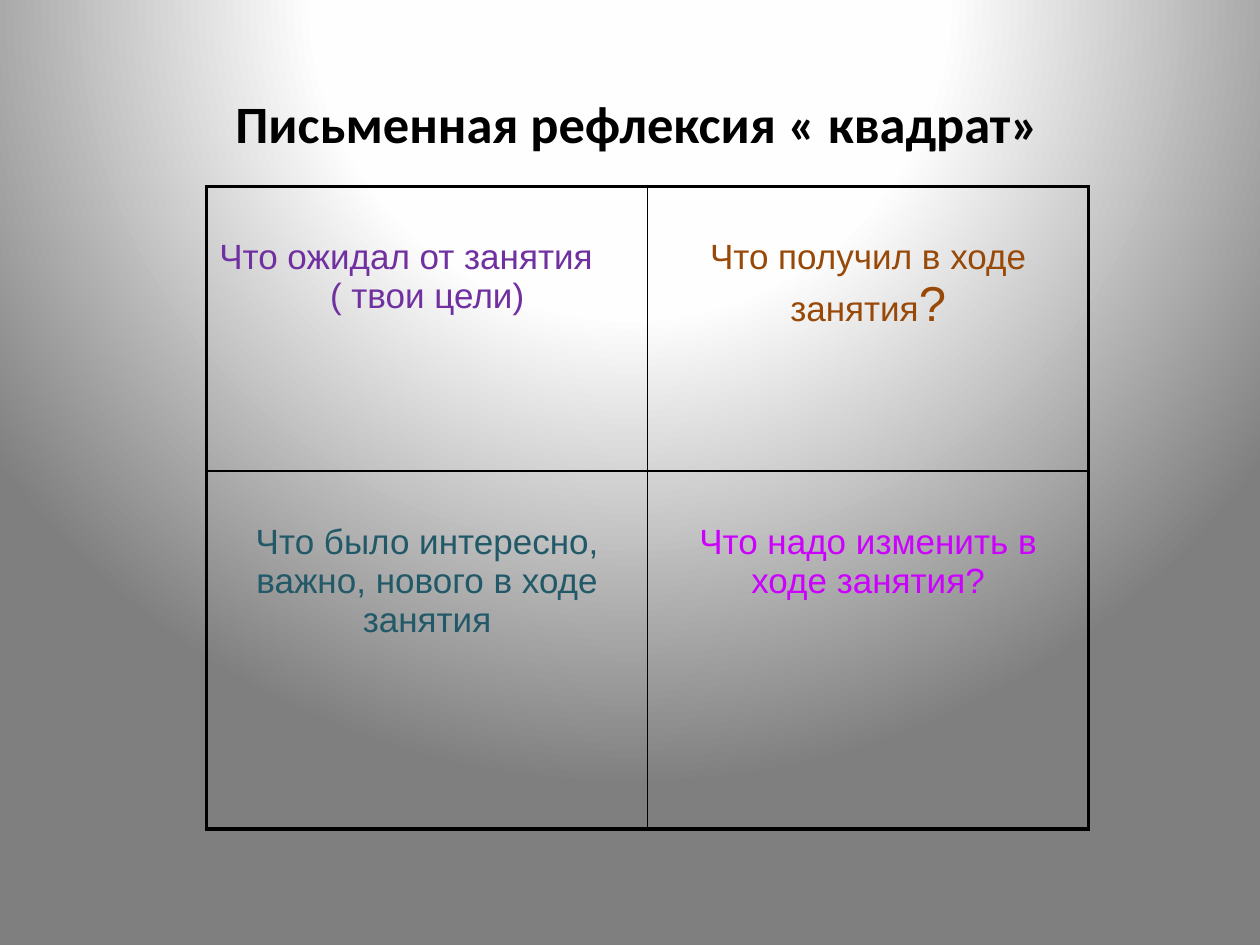
from pptx import Presentation
from pptx import util as u
from pptx.dml.color import RGBColor
from pptx.enum import text
from pptx.oxml import parse_xml
from pptx.oxml.ns import nsdecls

BLACK = RGBColor(0x00, 0x00, 0x00)
PURPLE = RGBColor(0x70, 0x30, 0xA0)
BROWN = RGBColor(0x98, 0x48, 0x07)
TEAL = RGBColor(0x21, 0x59, 0x68)
MAGENTA = RGBColor(0xCC, 0x00, 0xFF)
GLOW = [(0, RGBColor(0xFF, 0xFF, 0xFF)),
        (40, RGBColor(0xFE, 0xFE, 0xFE)),
        (100, RGBColor(0x7F, 0x7F, 0x7F))]

CENTER, LEFT = text.PP_ALIGN.CENTER, text.PP_ALIGN.LEFT
OUTER, INNER = 2.25, 1

# Each cell: colour, then paragraphs as (alignment, [(text, size)])
QUESTIONS = [
    [(PURPLE, [(LEFT, [("Что ожидал от занятия", 20)]),
               (CENTER, [("( твои цели)", 20)])]),
     (BROWN, [(CENTER, [("Что получил в ходе занятия", 20), ("?", 28)])])],
    [(TEAL, [(CENTER, [("Что было интересно, важно, нового в ходе занятия", 20)])]),
     (MAGENTA, [(CENTER, [("Что надо изменить в ходе занятия?", 20)])])],
]


def set_background(s):
    """Circular glow centred above the slide."""
    stops = "".join(f'<a:gs pos="{pos * 1000}"><a:srgbClr val="{color}"/></a:gs>'
                    for pos, color in GLOW)
    s.background.fill.gradient()
    grad = s.element.find(".//{*}gradFill")
    grad.getparent().replace(grad, parse_xml(
        f'<a:gradFill {nsdecls("a")} rotWithShape="1"><a:gsLst>{stops}</a:gsLst>'
        '<a:path path="circle"><a:fillToRect l="50000" t="-80000" r="50000" b="180000"/>'
        '</a:path></a:gradFill>'))


def add_title(s, box):
    tf = s.shapes.add_textbox(*box).text_frame
    tf.word_wrap = True
    tf.vertical_anchor = text.MSO_ANCHOR.MIDDLE
    p = tf.paragraphs[0]
    p.text = "Письменная рефлексия « квадрат»"
    p.alignment = CENTER
    p.font.name, p.font.size, p.font.bold = "Calibri", u.Pt(30), True
    p.font.color.rgb = BLACK


def set_borders(cell, widths):
    tc_pr = cell._tc.get_or_add_tcPr()
    for i, (side, width) in enumerate(zip("LRTB", widths)):
        tc_pr.insert(i, parse_xml(
            f'<a:ln{side} {nsdecls("a")} w="{u.Pt(width)}"><a:solidFill>'
            f'<a:srgbClr val="{BLACK}"/></a:solidFill></a:ln{side}>'))


def fill_cell(cell, color, paragraphs):
    cell.fill.background()
    cell.margin_top = u.Inches(0.41)
    tf = cell.text_frame
    for i, (align, runs) in enumerate(paragraphs):
        p = tf.add_paragraph() if i else tf.paragraphs[0]
        p.alignment = align
        for words, size in runs:
            r = p.add_run()
            r.text = words
            r.font.name, r.font.size = "Arial", u.Pt(size)
            r.font.color.rgb = color


def add_square(s, box, row_shares):
    rows, cols = len(QUESTIONS), len(QUESTIONS[0])
    table = s.shapes.add_table(rows, cols, *box).table
    table.first_row = table.horz_banding = False
    for row, share in zip(table.rows, row_shares):
        row.height = int(box[3] * share)
    for y, line in enumerate(QUESTIONS):
        for x, (color, paragraphs) in enumerate(line):
            cell = table.cell(y, x)
            fill_cell(cell, color, paragraphs)
            on_edge = (x == 0, x == cols - 1, y == 0, y == rows - 1)
            set_borders(cell, [OUTER if edge else INNER for edge in on_edge])


def main():
    prs = Presentation()
    prs.slide_width, prs.slide_height = u.Inches(10), u.Inches(7.5)
    s = prs.slides.add_slide(prs.slide_layouts[6])
    set_background(s)
    add_title(s, [u.Inches(v) for v in (1.56, 0.31, 7, 1.33)])
    add_square(s, [u.Inches(v) for v in (1.64, 1.48, 7, 5.1)], (0.443, 0.557))
    prs.save("out.pptx")


if __name__ == "__main__":
    main()
